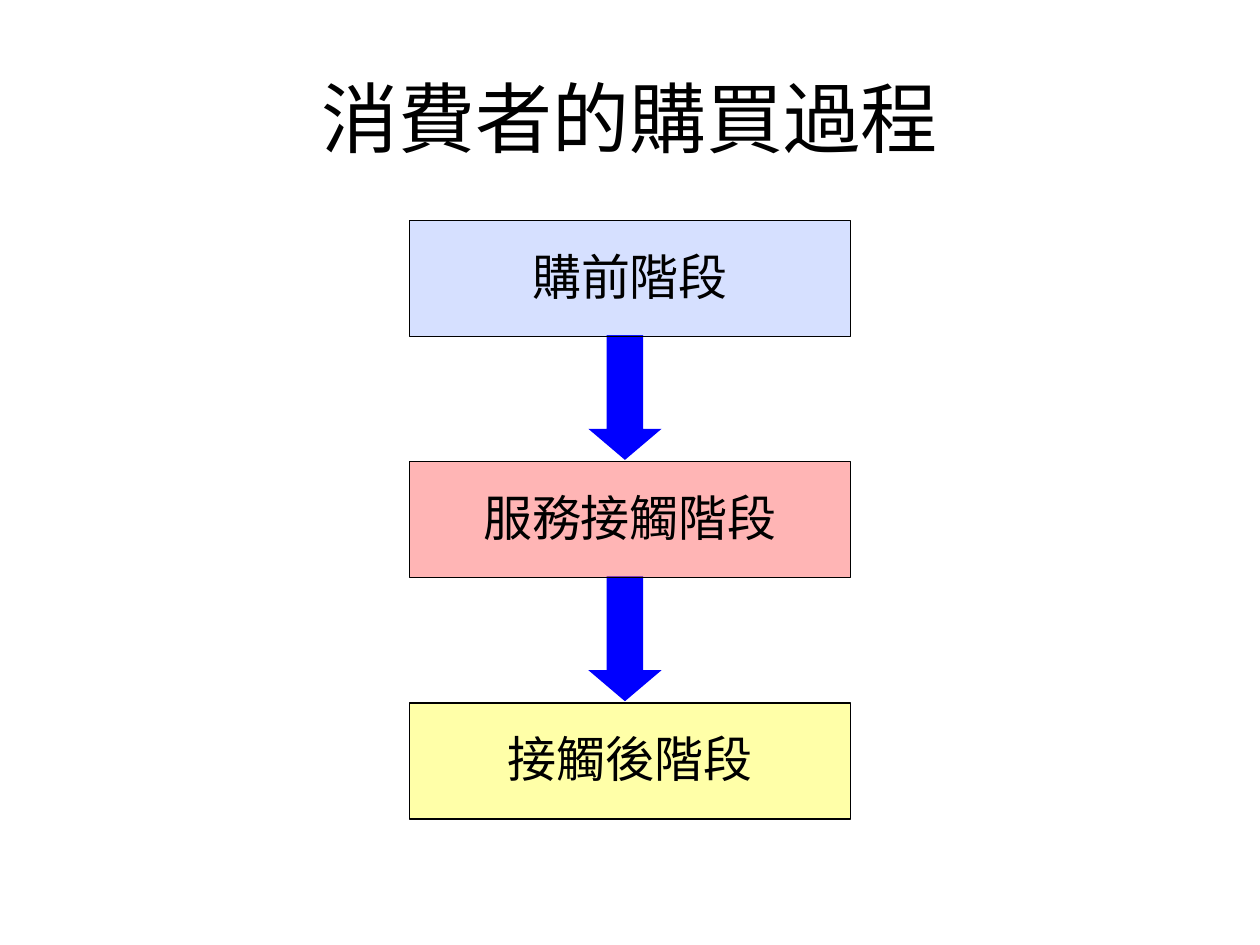
from dataclasses import dataclass

from lxml import etree
from pptx import Presentation
from pptx.dml.color import RGBColor
from pptx.enum import shapes, text
from pptx.oxml import ns
from pptx.util import Inches, Pt


@dataclass(frozen=True)
class Theme:
    """Colours and type sizes of the deck."""
    font: str = "Calibri"
    title_size: int = 44
    stage_size: int = 28
    line_width: float = 0.75
    ink: str = "000000"
    arrow: str = "0000FF"
    before: tuple = ("3366FF", 20)
    contact: tuple = ("FF0000", 29)
    after: tuple = ("FFFF99", 85)


THEME = Theme()
STAGES = [
    ("購前階段", THEME.before),
    ("服務接觸階段", THEME.contact),
    ("接觸後階段", THEME.after),
]


def apply_format(target, values):
    """Set each named attribute of the target."""
    for name, value in values.items():
        setattr(target, name, value)


def write(shape, wording, size):
    """Put one centred, formatted line of text into a shape."""
    apply_format(shape.text_frame, {"vertical_anchor": text.MSO_ANCHOR.MIDDLE})
    para = shape.text_frame.paragraphs[0]
    para.alignment = text.PP_ALIGN.CENTER
    span = para.add_run()
    span.text = wording
    apply_format(span.font, {"name": THEME.font, "size": Pt(size)})
    span.font.color.rgb = RGBColor.from_string(THEME.ink)
    return para


def paint(shape, colour, opacity=100):
    """Fill a shape with a colour at the given percentage of opacity."""
    shape.shadow.inherit = False
    shape.fill.solid()
    shape.fill.fore_color.rgb = RGBColor.from_string(colour)
    if opacity < 100:
        tint = shape.fill._xPr.find(ns.qn("a:solidFill"))[0]
        etree.SubElement(tint, ns.qn("a:alpha"), val=str(opacity * 1000))


def add_title(page, wording, left, top, width, height):
    """Place the title placeholder in its box."""
    title = page.shapes.title
    apply_format(title, {"left": left, "top": top, "width": width, "height": height})
    write(title, wording, THEME.title_size)


def add_stage(page, wording, tint, left, top, width, height):
    """Draw one outlined stage box with its label."""
    box = page.shapes.add_shape(shapes.MSO_SHAPE.RECTANGLE, left, top, width, height)
    paint(box, *tint)
    box.line.color.rgb = RGBColor.from_string(THEME.ink)
    box.line.width = Pt(THEME.line_width)
    box.text_frame.word_wrap = False
    write(box, wording, THEME.stage_size).line_spacing = 0.95


def add_arrow(page, left, top, width, height):
    """Draw one block arrow pointing down."""
    arrow = page.shapes.add_shape(shapes.MSO_SHAPE.DOWN_ARROW, left, top, width, height)
    paint(arrow, THEME.arrow)
    arrow.line.fill.background()
    arrow.adjustments[0] = 0.5
    arrow.adjustments[1] = 0.424


def add_process(page, stages, left, top, width, height):
    """Stack the stages evenly in the box, joined by arrows."""
    stage_height = Inches(0.92)
    pitch = (height - stage_height) // (len(stages) - 1)
    arrow_left = left + Inches(1.42)
    for index, (wording, tint) in enumerate(stages):
        stage_top = top + index * pitch
        if index < len(stages) - 1:
            add_arrow(page, arrow_left, stage_top + stage_height - Inches(0.01),
                      Inches(0.58), Inches(0.99))
        add_stage(page, wording, tint, left, stage_top, width, stage_height)


def main():
    """Build and save the deck."""
    deck = Presentation()
    apply_format(deck, {"slide_width": Inches(10), "slide_height": Inches(7.5)})
    page = deck.slides.add_slide(deck.slide_layouts.get_by_name("Title Only"))
    add_title(page, "消費者的購買過程", Inches(0.5), Inches(0.3), Inches(9), Inches(1.25))
    add_process(page, STAGES, Inches(3.25), Inches(1.75), Inches(3.5), Inches(4.75))
    deck.save("out.pptx")


if __name__ == "__main__":
    main()
